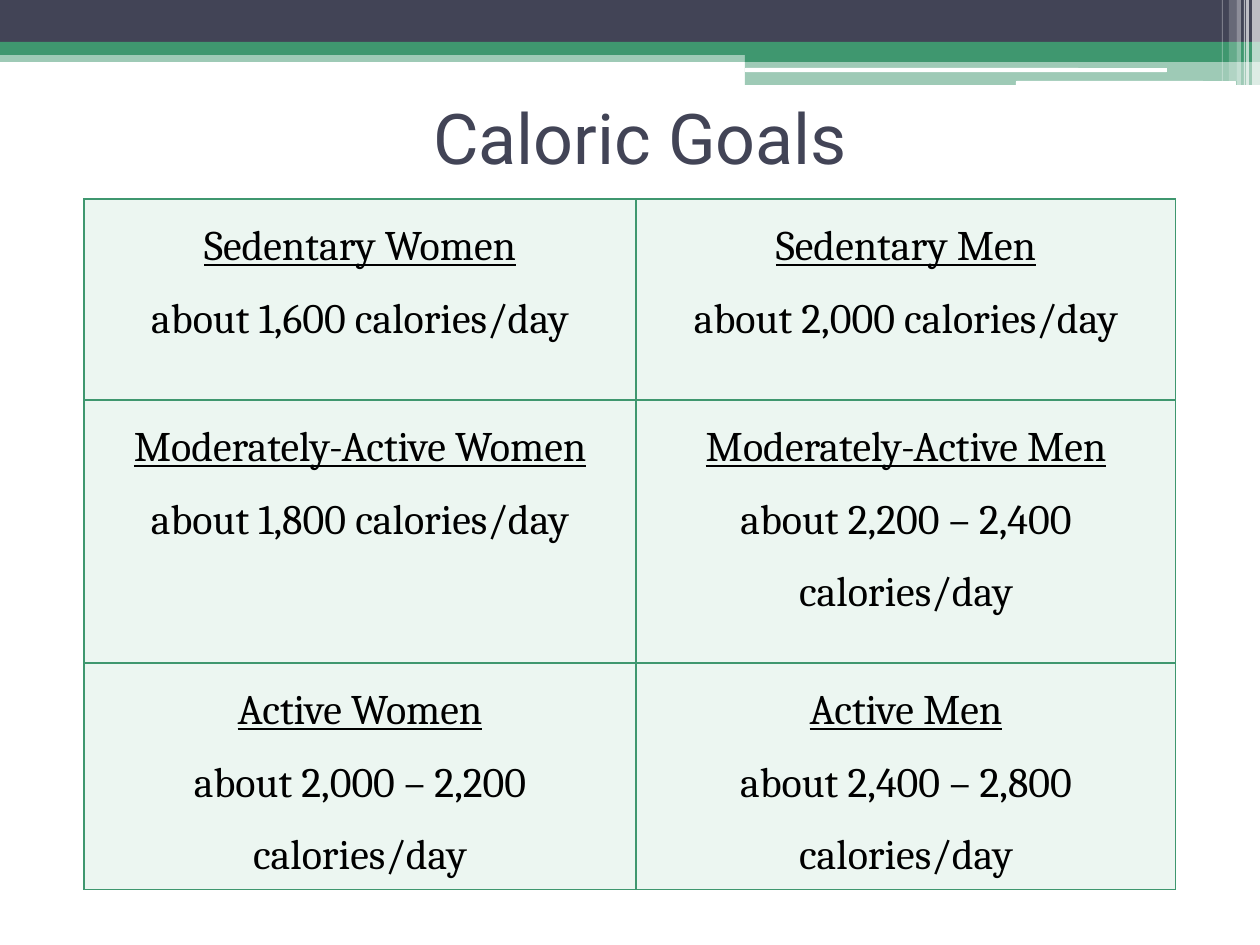
from dataclasses import dataclass

from lxml.etree import SubElement
from pptx import Presentation
from pptx.dml.color import RGBColor
from pptx.enum.shapes import MSO_SHAPE as Shape
from pptx.enum.text import MSO_ANCHOR as Anchor, PP_ALIGN as Align
from pptx.oxml.ns import qn
from pptx.util import Pt

EMU_PER_PX = 914400 / 126


@dataclass(frozen=True)
class Theme:
    slate: str = "424456"
    green: str = "3F976F"
    mint: str = "ECF6F1"
    white: str = "FFFFFF"
    black: str = "000000"
    title_font: str = "Roboto"
    body_font: str = "Cambria"
    title_size: int = 40
    body_size: int = 24
    border: float = 0.75
    line_spacing: float = 1.5


THEME = Theme()

GOALS = [
    [("Sedentary Women", "about 1,600 calories/day"),
     ("Sedentary Men", "about 2,000 calories/day")],
    [("Moderately-Active Women", "about 1,800 calories/day"),
     ("Moderately-Active Men", "about 2,200 – 2,400 calories/day")],
    [("Active Women", "about 2,000 – 2,200 calories/day"),
     ("Active Men", "about 2,400 – 2,800 calories/day")],
]


def px(length):
    return round(length * EMU_PER_PX)


def set_all(target, values):
    for key, value in values.items():
        setattr(target, key, value)


def write(paragraph, text, font, size, color, underline=False):
    paragraph.alignment = Align.CENTER
    run = paragraph.add_run()
    run.text = text
    set_all(run.font, {"name": font, "size": Pt(size), "underline": underline})
    run.font.color.rgb = RGBColor.from_string(color)


def add_bar(slide, box, color, opacity=100, kind=Shape.RECTANGLE):
    bar = slide.shapes.add_shape(kind, *map(px, box))
    bar.shadow.inherit = False
    bar.line.fill.background()
    bar.fill.solid()
    bar.fill.fore_color.rgb = RGBColor.from_string(color)
    if opacity < 100:
        tint = bar.fill._xPr.find(qn("a:solidFill"))[0]
        SubElement(tint, qn("a:alpha"), val=str(opacity * 1000))


def add_header(slide, box):
    left, top, width, height = box
    right_part = 745
    # Full-width bands, then the deeper band on the right
    for x, y, h, color, opacity in [
        (0, 50, 12, THEME.green, 50),
        (0, 0, 42, THEME.slate, 100),
        (0, 42, 13, THEME.green, 100),
        (right_part, 49, 13, THEME.green, 100),
        (right_part, 61, 24, THEME.green, 50),
    ]:
        add_bar(slide, (left + x, top + y, width - x, h), color, opacity)
    # White rules
    for x, y, w, h in [(right_part, 68, 422, 4), (1016, 81, 220, 5)]:
        add_bar(slide, (left + x, top + y, w, h), THEME.white,
                kind=Shape.ROUNDED_RECTANGLE)
    # Translucent stripes, measured from the right edge
    for inset, w, trim, opacity in [
        (8, 8, 0, 65), (14, 3, 0, 65), (16, 1, 0, 60),
        (23, 4, 0, 40), (31, 8, 5, 20), (38, 1, 5, 30),
    ]:
        add_bar(slide, (left + width - inset, top, w, height - trim),
                THEME.white, opacity)


def add_title(slide, box, text):
    frame = slide.shapes.add_textbox(*map(px, box)).text_frame
    set_all(frame, {"word_wrap": True, "vertical_anchor": Anchor.MIDDLE})
    write(frame.paragraphs[0], text, THEME.title_font, THEME.title_size, THEME.slate)


def add_borders(cell):
    properties = cell._tc.get_or_add_tcPr()
    for position, side in enumerate(("lnL", "lnR", "lnT", "lnB")):
        line = SubElement(properties, qn(f"a:{side}"), w=str(Pt(THEME.border)))
        SubElement(SubElement(line, qn("a:solidFill")), qn("a:srgbClr"), val=THEME.green)
        properties.insert(position, line)  # borders come before the fill


def fill_goal(cell, group, calories):
    set_all(cell, {"margin_left": px(9), "margin_right": px(9),
                   "margin_top": 0, "margin_bottom": 0})
    cell.fill.solid()
    cell.fill.fore_color.rgb = RGBColor.from_string(THEME.mint)
    add_borders(cell)
    frame = cell.text_frame
    for paragraph, text, underline in [
        (frame.paragraphs[0], group, True),
        (frame.add_paragraph(), calories, False),
    ]:
        paragraph.line_spacing = THEME.line_spacing
        write(paragraph, text, THEME.body_font, THEME.body_size, THEME.black, underline)


def add_goals(slide, box, columns, rows):
    table = slide.shapes.add_table(len(rows), len(columns), *map(px, box)).table
    set_all(table, {"first_row": False, "horz_banding": False})
    for column, width in zip(table.columns, columns):
        column.width = px(width)
    for row, height, goals in zip(table.rows, rows, GOALS):
        row.height = px(height)
        for cell, goal in zip(row.cells, goals):
            fill_goal(cell, *goal)


def main():
    deck = Presentation()
    set_all(deck, {"slide_width": px(1260), "slide_height": px(945)})
    slide = deck.slides.add_slide(deck.slide_layouts[6])
    add_header(slide, (0, 0, 1260, 86))
    add_title(slide, (73, 63, 1134, 147), "Caloric Goals")
    add_goals(slide, (84, 199, 1092, 682), columns=(552, 540), rows=(201, 263, 218))
    deck.save("out.pptx")


if __name__ == "__main__":
    main()
